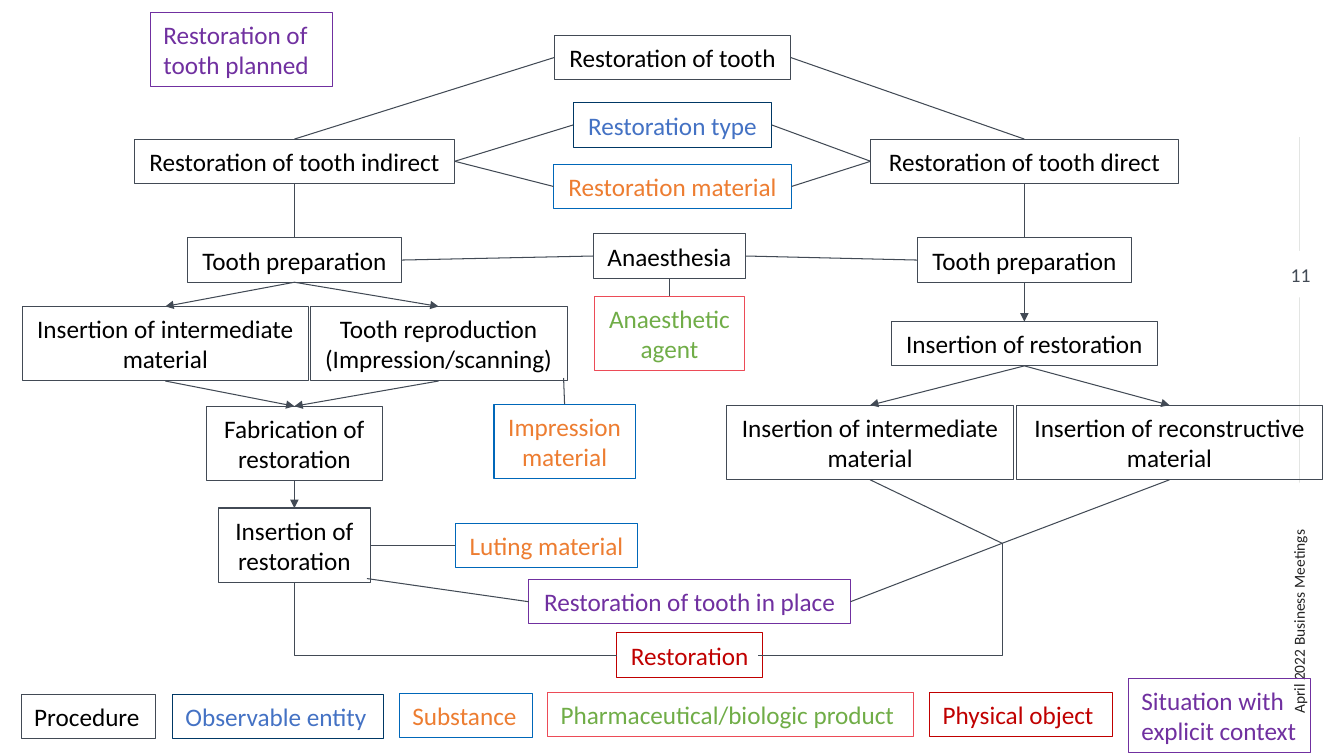
from lxml.etree import SubElement as Sub
from pptx import Presentation
from pptx.dml.color import RGBColor as RGB
from pptx.enum.shapes import MSO_CONNECTOR as Conn, MSO_SHAPE as Shape
from pptx.enum.text import MSO_ANCHOR as Anchor, PP_ALIGN as Align
from pptx.oxml.ns import qn
from pptx.util import Inches, Pt

SLATE = RGB(0x42, 0x4A, 0x55)
BLACK = RGB(0, 0, 0)
WHITE = RGB(0xFF, 0xFF, 0xFF)
INK = RGB(0x22, 0x22, 0x22)
GREY = RGB(0xB2, 0xB7, 0xB2)
NAVY = RGB(0x00, 0x38, 0x65)
BLUE = RGB(0x44, 0x72, 0xC4)
AZURE = RGB(0x00, 0x67, 0xB9)
ORANGE = RGB(0xED, 0x7D, 0x31)
ROSE = RGB(0xEC, 0x4B, 0x57)
GREEN = RGB(0x70, 0xAD, 0x47)
RED = RGB(0xC0, 0x00, 0x00)
PURPLE = RGB(0x70, 0x30, 0xA0)

STYLES = {
    "step": (SLATE, BLACK),
    "entity": (NAVY, BLUE),
    "matter": (AZURE, ORANGE),
    "drug": (ROSE, GREEN),
    "object": (RED, RED),
    "context": (PURPLE, PURPLE),
}
TOP, LEFT, BASE, RIGHT = range(4)

deck = Presentation()
deck.slide_width, deck.slide_height = Inches(13.33), Inches(7.5)
COL, ROW = deck.slide_width / 133.3, deck.slide_height / 75
slide = deck.slides.add_slide(deck.slide_layouts[6])
shapes = slide.shapes
nodes = {}


def add_box(name, style, mid, top, wide, rows, text, align):
    edge, ink = STYLES[style]
    box = shapes.add_shape(Shape.RECTANGLE, int((mid - wide / 2) * COL), int(top * ROW),
                           int(wide * COL), int((1.4 + 3 * rows) * ROW))
    box.shadow.inherit = False
    box.fill.background()
    box.line.color.rgb = edge
    box.line.width = Pt(0.75)
    frame = box.text_frame
    frame.word_wrap = align == Align.LEFT
    frame.vertical_anchor = Anchor.TOP
    frame.margin_left = frame.margin_right = Inches(0.13)
    frame.margin_top = frame.margin_bottom = Inches(0.07)
    frame.text = text
    for para in frame.paragraphs:
        para.alignment = align
        para.font.size = Pt(18)
        para.font.name = "Calibri"
        para.font.color.rgb = ink
    nodes[name] = box


def add_link(start, end, arrow=False, kind=Conn.STRAIGHT):
    x, y = [(0, 0) if isinstance(p[0], str) else p for p in (start, end)]
    line = shapes.add_connector(kind, int(x[0] * COL), int(x[1] * ROW),
                                int(y[0] * COL), int(y[1] * ROW))
    for point, join in ((start, line.begin_connect), (end, line.end_connect)):
        if isinstance(point[0], str):
            join(nodes[point[0]], point[1])
    line.line.color.rgb = SLATE
    line.line.width = Pt(0.75)
    props = line._element.spPr
    if arrow:
        Sub(props.find(qn("a:ln")), qn("a:tailEnd"), type="triangle")
    if kind == Conn.ELBOW:
        props.find(qn("a:prstGeom")).set("prst", "bentConnector2")
    Sub(props, qn("a:effectLst"))


event = shapes.add_textbox(int(111.7 * COL), int(53.2 * ROW), int(34.3 * COL), int(2.9 * ROW))
event.rotation = 270
event.text_frame.word_wrap = True
rule = shapes.add_shape(Shape.RECTANGLE, int(128.9 * COL), int(13.6 * ROW),
                        Pt(0.25), int(34.3 * ROW))
page = shapes.add_shape(Shape.RECTANGLE, int(126.7 * COL), int(24.9 * ROW),
                        int(4.6 * COL), int(4.6 * ROW))
for part, paint in ((rule, GREY), (page, WHITE)):
    part.shadow.inherit = False
    part.fill.solid()
    part.fill.fore_color.rgb = paint
    part.line.fill.background()
page.text_frame.vertical_anchor = Anchor.MIDDLE
for part, text, size, ink, align in (
    (event, "April 2022 Business Meetings", 11, INK, Align.LEFT),
    (page, "11", 14, SLATE, Align.CENTER),
):
    part.text_frame.text = text
    para = part.text_frame.paragraphs[0]
    para.alignment = align
    para.font.size = Pt(size)
    para.font.name = "Calibri"
    para.font.color.rgb = ink

WEST, MID, EAST = 29.2, 66.7, 101.6
for spec_row in (
    ("root", "step", MID, 3.5, 23.4, 1, "Restoration of tooth"),
    ("indirect", "step", WEST, 13.8, 31.8, 1, "Restoration of tooth indirect"),
    ("direct", "step", EAST, 13.8, 30.5, 1, "Restoration of tooth direct"),
    ("prep east", "step", EAST, 23.6, 21.2, 1, "Tooth preparation"),
    ("insert east", "step", EAST, 31.9, 26.4, 1, "Insertion of restoration"),
    ("inter east", "step", 86.3, 40.2, 28.4, 2, "Insertion of intermediate\nmaterial"),
    ("rebuild", "step", 116, 40.2, 30.4, 2, "Insertion of reconstructive\nmaterial"),
    ("prep west", "step", WEST, 23.6, 21.2, 1, "Tooth preparation"),
    ("scan", "step", 43.5, 30.4, 25.5, 2, "Tooth reproduction\n(Impression/scanning)"),
    ("inter west", "step", 16.4, 30.4, 28.4, 2, "Insertion of intermediate\nmaterial"),
    ("make", "step", WEST, 40.3, 17.4, 2, "Fabrication of\nrestoration"),
    ("insert west", "step", WEST, 50.4, 15.1, 2, "Insertion of\nrestoration"),
    ("type", "entity", MID, 10.2, 19.7, 1, "Restoration type"),
    ("matter", "matter", MID, 16.3, 23.6, 1, "Restoration material"),
    ("numb", "step", 66.4, 23.2, 15.1, 1, "Anaesthesia"),
    ("agent", "drug", 66.4, 29.4, 14.8, 2, "Anaesthetic\nagent"),
    ("luting", "matter", 54.2, 51.9, 18.1, 1, "Luting material"),
    ("mould", "matter", 56, 40.1, 14, 2, "Impression\nmaterial"),
    ("result", "object", 68.4, 62.8, 14.5, 1, "Restoration"),
    ("placed", "context", 68.4, 57.5, 31.9, 1, "Restoration of tooth in place"),
):
    add_box(*spec_row, Align.CENTER)

for style, mid, top, wide, rows, text in (
    ("step", 8.75, 68.9, 13.3, 1, "Procedure"),
    ("entity", 27.55, 68.9, 20.9, 1, "Observable entity"),
    ("matter", 46.2, 68.8, 13.2, 1, "Substance"),
    ("drug", 72.45, 68.7, 36.3, 1, "Pharmaceutical/biologic product"),
    ("object", 101.25, 68.7, 18.1, 1, "Physical object"),
    ("context", 120.95, 67.3, 18.1, 2, "Situation with explicit context"),
    ("context", 23.95, 1.2, 18.1, 2, "Restoration of tooth planned"),
):
    add_box(text, style, mid, top, wide, rows, text, Align.LEFT)

for start, end in (
    ("prep west", "inter west"), ("prep west", "scan"), ("inter west", "make"),
    ("scan", "make"), ("make", "insert west"), ("prep east", "insert east"),
    ("insert east", "inter east"), ("insert east", "rebuild"),
):
    add_link((start, BASE), (end, TOP), arrow=True)

JOINT = (99.4, 53.9)
for start, end in (
    (("root", LEFT), ("indirect", TOP)),
    (("root", RIGHT), ("direct", TOP)),
    (("indirect", BASE), ("prep west", TOP)),
    (("direct", BASE), ("prep east", TOP)),
    (("indirect", RIGHT), ("type", LEFT)),
    (("indirect", RIGHT), ("matter", LEFT)),
    (("direct", LEFT), ("type", RIGHT)),
    (("direct", LEFT), ("matter", RIGHT)),
    (("prep west", RIGHT), ("numb", LEFT)),
    (("prep east", LEFT), ("numb", RIGHT)),
    (("numb", BASE), ("agent", TOP)),
    (("insert west", RIGHT), ("luting", LEFT)),
    ((55.9, 37.5), ("mould", TOP)),
    ((36.4, 57.4), ("placed", LEFT)),
    (("inter east", BASE), JOINT),
    (("rebuild", BASE), JOINT),
    (JOINT, ("placed", RIGHT)),
):
    add_link(start, end)

add_link(("result", LEFT), ("insert west", BASE), kind=Conn.ELBOW)
add_link((75.2, 65), JOINT, kind=Conn.ELBOW)

deck.save("out.pptx")
